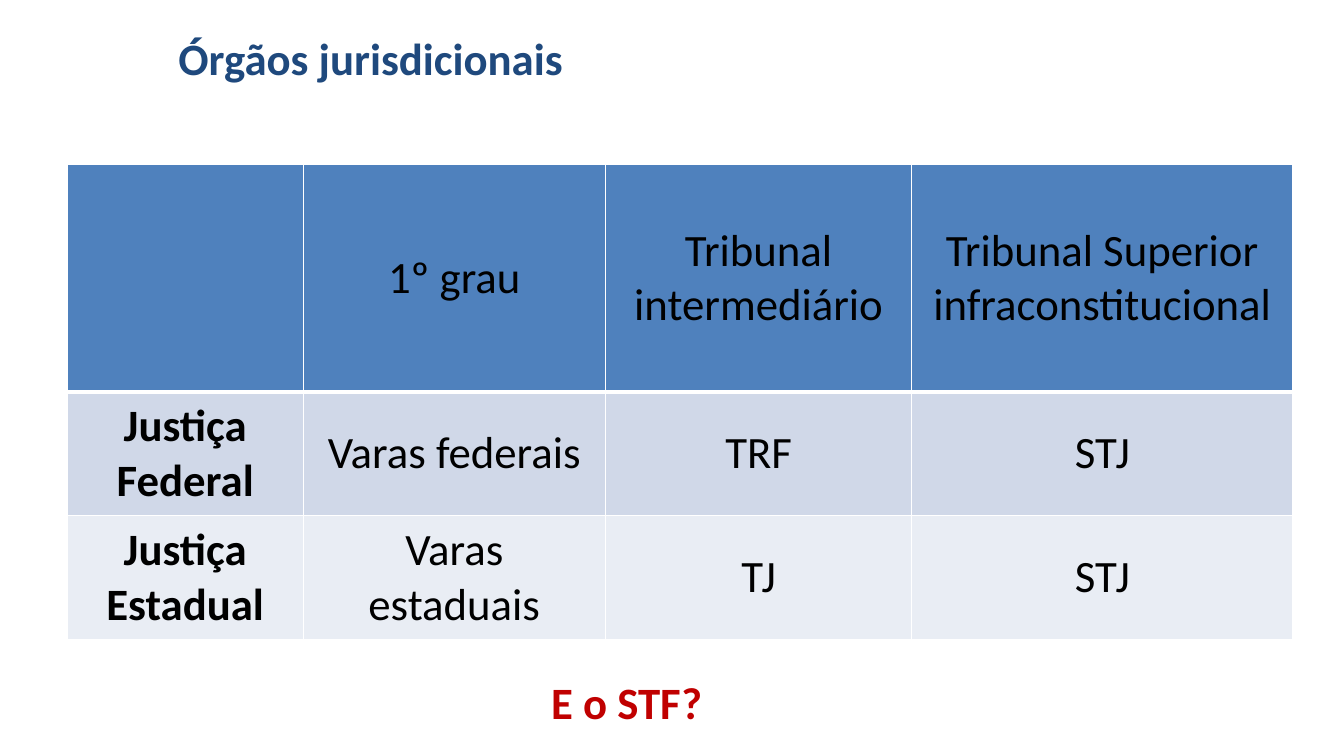
from dataclasses import dataclass

from lxml.etree import SubElement
from pptx import Presentation
from pptx.dml.color import RGBColor
from pptx.enum.text import MSO_ANCHOR as Anchor, PP_ALIGN as Align
from pptx.oxml.ns import qn
from pptx.util import Cm, Pt


@dataclass(frozen=True)
class Theme:
    """Colours, font and type size of the slide."""
    font: str = "Calibri"
    size: int = 32
    title: str = "1F497D"
    text: str = "000000"
    question: str = "C00000"
    header: str = "4F81BD"
    bands: tuple = ("D0D8E8", "E9EDF4")
    border: str = "FFFFFF"


THEME = Theme()
COLUMN_WIDTHS = (5.94, 7.62, 7.72, 9.6)
ROW_HEIGHTS = (5.72, 3.1, 3.1)
COURTS = (
    ("", "1º grau", "Tribunal intermediário", "Tribunal Superior infraconstitucional"),
    ("Justiça Federal", "Varas federais", "TRF", "STJ"),
    ("Justiça Estadual", "Varas estaduais", "TJ", "STJ"),
)


def write_text(frame, text, color=THEME.text, bold=False, align=Align.LEFT):
    """Write one formatted paragraph into a text frame."""
    frame.word_wrap = True
    paragraph = frame.paragraphs[0]
    paragraph.alignment = align
    run = paragraph.add_run()
    run.text = text
    run.font.name = THEME.font
    run.font.size = Pt(THEME.size)
    run.font.bold = bold
    run.font.color.rgb = RGBColor.from_string(color)


def set_borders(cell, bottom):
    """Draw the cell borders, with the bottom one in its own width."""
    properties = cell._tc.get_or_add_tcPr()
    widths = {"a:lnL": 1, "a:lnR": 1, "a:lnT": 1, "a:lnB": bottom}
    for side, width in widths.items():
        line = SubElement(properties, qn(side), w=str(Pt(width)))
        fill = SubElement(line, qn("a:solidFill"))
        SubElement(fill, qn("a:srgbClr"), val=THEME.border)


def format_cell(cell, text, fill, bold, bottom):
    """Fill one table cell and centre its text."""
    set_borders(cell, bottom)
    cell.fill.solid()
    cell.fill.fore_color.rgb = RGBColor.from_string(fill)
    cell.vertical_anchor = Anchor.MIDDLE
    cell.margin_left = cell.margin_right = Cm(0.33)
    cell.margin_top = cell.margin_bottom = Cm(0.18)
    if text:
        write_text(cell.text_frame, text, bold=bold, align=Align.CENTER)


def add_title(slide, text):
    """Place and format the title placeholder."""
    title = slide.shapes.title
    title.left, title.top, title.width, title.height = Cm(4.24), Cm(0.58), Cm(27.94), Cm(1.73)
    title.text_frame.vertical_anchor = Anchor.MIDDLE
    write_text(title.text_frame, text, color=THEME.title, bold=True)


def add_court_table(slide):
    """Add the table of courts by branch and level."""
    frame = slide.shapes.add_table(
        len(ROW_HEIGHTS), len(COLUMN_WIDTHS), Cm(1.7), Cm(4.15),
        Cm(sum(COLUMN_WIDTHS)), Cm(sum(ROW_HEIGHTS)))
    table = frame.table
    for column, width in zip(table.columns, COLUMN_WIDTHS):
        column.width = Cm(width)
    fills = (THEME.header, *THEME.bands)
    for i, (row, height) in enumerate(zip(table.rows, ROW_HEIGHTS)):
        row.height = Cm(height)
        for j, cell in enumerate(row.cells):
            format_cell(cell, COURTS[i][j], fills[i], bold=j == 0, bottom=3 if i == 0 else 1)


def add_question(slide, text):
    """Add the closing question below the table."""
    box = slide.shapes.add_textbox(Cm(13.56), Cm(16.53), Cm(18.6), Cm(2.3))
    frame = box.text_frame
    frame.margin_left = frame.margin_right = Cm(0.33)
    frame.vertical_anchor = Anchor.MIDDLE
    write_text(frame, text, color=THEME.question, bold=True)


def main():
    """Build the slide and save it."""
    presentation = Presentation()
    presentation.slide_width, presentation.slide_height = Cm(33.87), Cm(19.05)
    slide = presentation.slides.add_slide(presentation.slide_layouts.get_by_name("Title Only"))
    add_title(slide, "Órgãos jurisdicionais")
    add_court_table(slide)
    add_question(slide, "E o STF?")
    presentation.save("out.pptx")


if __name__ == "__main__":
    main()
